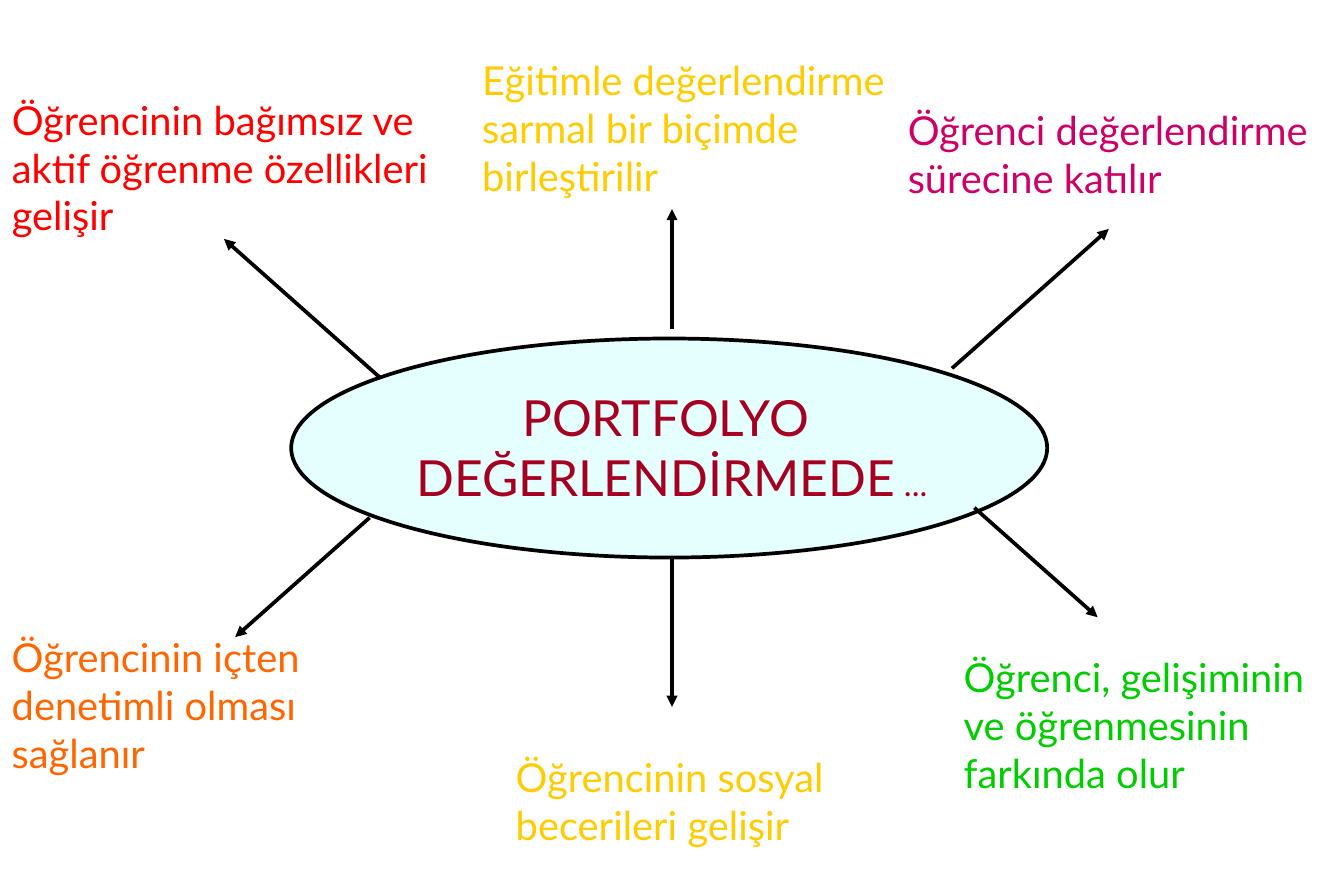
from dataclasses import dataclass

import pptx
import pptx.dml.color
import pptx.enum.shapes
import pptx.enum.text
import pptx.oxml.ns
import pptx.oxml.xmlchemy
import pptx.shapes.base
import pptx.slide
import pptx.util

WIDTH, HEIGHT = pptx.util.Inches(11.25), pptx.util.Inches(7.5)
COLUMNS, ROWS = 120, 90
FONT = "Lato"
BLACK = "000000"
LINE_WIDTH = pptx.util.Pt(2.25)


@dataclass(frozen=True)
class Outcome:
    """A statement, and the arrow that leads to it, in columns and rows."""
    text: str
    color: str
    column: float
    row: float
    columns: float
    rows: float
    arrow_start: tuple[float, float]
    arrow_end: tuple[float, float]


OUTCOMES = [
    Outcome("Eğitimle değerlendirme sarmal bir biçimde birleştirilir", "FFCC00",
            42, 5, 46.5, 15.6, (60, 33), (60, 21)),
    Outcome("Öğrencinin içten denetimli olması sağlanır", "FF6600",
            0, 63, 31, 15.6, (33, 52), (21, 64)),
    Outcome("Öğrenci değerlendirme sürecine katılır", "CC0066",
            80, 10, 40, 15.6, (85, 37), (99, 23)),
    Outcome("Öğrenci, gelişiminin ve öğrenmesinin farkında olur", "00CC00",
            85, 65, 35, 20.4, (87, 51), (98, 62)),
    Outcome("Öğrencinin sosyal becerileri gelişir", "FFCC00",
            45, 75, 32, 15.6, (60, 56), (60, 71)),
    Outcome("Öğrencinin bağımsız ve aktif öğrenme özellikleri gelişir", "FF0000",
            0, 9, 42, 15.6, (34, 38), (20, 24)),
]


def rgb(color: str) -> pptx.dml.color.RGBColor:
    return pptx.dml.color.RGBColor.from_string(color)


def across(columns: float) -> int:
    return round(WIDTH * columns / COLUMNS)


def down(rows: float) -> int:
    return round(HEIGHT * rows / ROWS)


def add_title(slide: pptx.slide.Slide) -> pptx.shapes.base.BaseShape:
    title = slide.shapes.title
    title.left, title.top = across(28.5), down(36.5)
    title.width, title.height = across(63), down(15)
    frame = title.text_frame
    frame.word_wrap = True
    frame.auto_size = pptx.enum.text.MSO_AUTO_SIZE.NONE
    frame.vertical_anchor = pptx.enum.text.MSO_ANCHOR.BOTTOM
    paragraph = frame.paragraphs[0]
    paragraph.text = "PORTFOLYO \vDEĞERLENDİRMEDE"
    paragraph.alignment = pptx.enum.text.PP_ALIGN.CENTER
    paragraph.font.name = FONT
    paragraph.font.size = pptx.util.Pt(30)
    paragraph.font.color.rgb = rgb("A50021")
    ellipsis = paragraph.add_run()
    ellipsis.text = " ..."
    ellipsis.font.size = pptx.util.Pt(20)
    return title


def add_ellipse_behind(slide: pptx.slide.Slide, title: pptx.shapes.base.BaseShape) -> None:
    ellipse = slide.shapes.add_shape(
        pptx.enum.shapes.MSO_SHAPE.OVAL, across(26), down(34), across(67.5), down(22))
    ellipse.shadow.inherit = False
    ellipse.fill.solid()
    ellipse.fill.fore_color.rgb = rgb("CCFFFF")
    fill_color = ellipse.element.spPr.find(
        pptx.oxml.ns.qn("a:solidFill")).find(pptx.oxml.ns.qn("a:srgbClr"))
    alpha = pptx.oxml.xmlchemy.OxmlElement("a:alpha")
    alpha.set("val", "50000")
    fill_color.append(alpha)
    ellipse.line.color.rgb = rgb(BLACK)
    ellipse.line.width = LINE_WIDTH
    title.element.addprevious(ellipse.element)


def add_statement(slide: pptx.slide.Slide, outcome: Outcome) -> None:
    box = slide.shapes.add_textbox(across(outcome.column), down(outcome.row),
                                   across(outcome.columns), down(outcome.rows))
    frame = box.text_frame
    frame.word_wrap = True
    frame.auto_size = pptx.enum.text.MSO_AUTO_SIZE.SHAPE_TO_FIT_TEXT
    paragraph = frame.paragraphs[0]
    paragraph.text = outcome.text
    paragraph.font.name = FONT
    paragraph.font.size = pptx.util.Pt(24)
    paragraph.font.color.rgb = rgb(outcome.color)


def add_arrow(slide: pptx.slide.Slide, outcome: Outcome) -> None:
    (start_column, start_row), (end_column, end_row) = outcome.arrow_start, outcome.arrow_end
    arrow = slide.shapes.add_connector(
        pptx.enum.shapes.MSO_CONNECTOR.STRAIGHT,
        across(start_column), down(start_row), across(end_column), down(end_row))
    arrow.line.color.rgb = rgb(BLACK)
    arrow.line.width = LINE_WIDTH
    properties = arrow.element.spPr
    head = pptx.oxml.xmlchemy.OxmlElement("a:tailEnd")
    head.set("type", "triangle")
    properties.find(pptx.oxml.ns.qn("a:ln")).append(head)
    properties.append(pptx.oxml.xmlchemy.OxmlElement("a:effectLst"))


def main() -> None:
    presentation = pptx.Presentation()
    presentation.slide_width, presentation.slide_height = WIDTH, HEIGHT
    slide = presentation.slides.add_slide(presentation.slide_layouts.get_by_name("Title Only"))
    title = add_title(slide)
    add_ellipse_behind(slide, title)
    for outcome in OUTCOMES:
        add_statement(slide, outcome)
    for outcome in OUTCOMES:
        add_arrow(slide, outcome)
    presentation.save("out.pptx")


if __name__ == "__main__":
    main()
